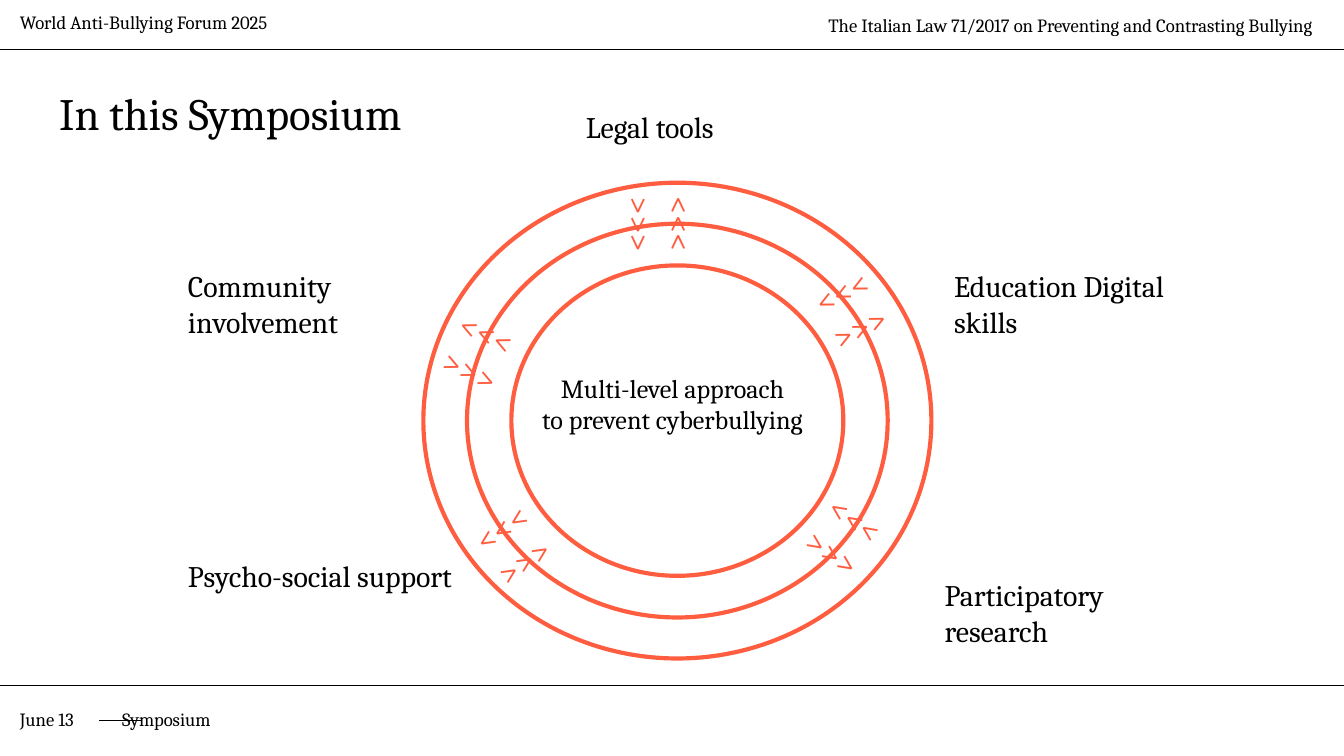
from lxml import etree
from pptx import Presentation
from pptx.dml.color import RGBColor
from pptx.enum import shapes as es, text as et
from pptx.oxml.ns import qn
from pptx.util import Inches, Pt

BLACK = RGBColor(0x00, 0x00, 0x00)
CORAL = RGBColor(0xFF, 0x5D, 0x40)
LEFT, MID, RIGHT = et.PP_ALIGN.LEFT, et.PP_ALIGN.CENTER, et.PP_ALIGN.RIGHT

# Widescreen page, 16 to 9
WIDE = Inches(10)
HIGH = WIDE * 9 // 16

FRAME = dict(word_wrap=True, auto_size=et.MSO_AUTO_SIZE.NONE,
             vertical_anchor=et.MSO_ANCHOR.TOP,
             **{"margin_" + side: Inches(0.1)
                for side in ("left", "top", "right", "bottom")})

# Topic labels: text, left, top, width, height
LABELS = [
    ("Legal tools", 4.26, 0.71, 1.48, 0.47),
    ("Participatory research", 6.93, 4.19, 1.91, 0.74),
    ("Education Digital skills", 7, 1.89, 1.91, 0.74),
    ("Psycho-social support", 1.3, 4.05, 2.18, 0.74),
    ("Community involvement", 1.3, 1.89, 1.91, 0.74),
]
# Ring sizes, sharing one centre
HUB = (5.04, 3.13)
RINGS = [(2.47, 2.31), (3.13, 2.93), (3.78, 3.54)]
# Two-way chevrons: left, top, turn
FLOWS = [(3.28, 2.33, 24.7), (4.47, 1.64, 90), (5.6, 2.27, 153.9),
         (5.41, 3.68, 214.8), (3.4, 3.52, 326.6)]


def apply(obj, vals):
    for key, val in vals.items():
        setattr(obj, key, val)


def write(shape, lines, size, color=BLACK, align=LEFT, space=None, tab=None):
    frame = shape.text_frame
    apply(frame, FRAME)
    for i, line in enumerate(lines):
        para = frame.add_paragraph() if i else frame.paragraphs[0]
        para.text = line
        apply(para, dict(alignment=align, line_spacing=space))
        if tab:
            stops = etree.SubElement(para._p.get_or_add_pPr(), qn("a:tabLst"))
            etree.SubElement(stops, qn("a:tab"), pos=str(Inches(tab)), algn="l")
        apply(para.font, dict(name="Cambria", size=Pt(size), bold=False))
        para.font.color.rgb = color


def add_text(slide, box, lines, size, turn=0, **style):
    shape = slide.shapes.add_textbox(*map(Inches, box))
    shape.rotation = turn
    write(shape, lines, size, **style)


def add_rule(slide, left, right, y):
    rule = slide.shapes.add_connector(
        es.MSO_CONNECTOR.STRAIGHT, *map(Inches, (left, y, right, y)))
    rule.line.color.rgb = BLACK
    rule.line.width = Pt(0.75)
    etree.SubElement(rule._element.spPr, qn("a:effectLst"))


def add_ring(slide, wide, high):
    box = (HUB[0] - wide / 2, HUB[1] - high / 2, wide, high)
    ring = slide.shapes.add_shape(es.MSO_SHAPE.OVAL, *map(Inches, box))
    ring.shadow.inherit = False
    ring.fill.background()
    ring.line.color.rgb = CORAL
    ring.line.width = Pt(2.25)


def add_title(slide):
    title = slide.shapes.title
    box = map(Inches, (0.34, 0.54, 9.32, 0.65))
    apply(title, dict(zip(("left", "top", "width", "height"), box)))
    write(title, ["In this Symposium"], 24)


def main():
    deck = Presentation()
    apply(deck, dict(slide_width=WIDE, slide_height=HIGH))
    slide = deck.slides.add_slide(deck.slide_layouts[5])

    # Header and footer
    for y in (0.37, 5.1):
        add_rule(slide, -0.02, 10.02, y)
    add_text(slide, (0.05, 0, 3.03, 0.16), ["World Anti-Bullying Forum 2025"], 10)
    add_text(slide, (5.14, 0, 4.72, 0.16),
             ["The Italian Law 71/2017 on Preventing and Contrasting Bullying"],
             10, align=RIGHT, space=1.15)
    add_text(slide, (0.05, 5.17, 2.17, 0.3), ["June 13\tSymposium"], 10, tab=0.76)
    add_rule(slide, 0.74, 1.05, 5.36)

    # Title and topics
    add_title(slide)
    for label, *box in LABELS:
        add_text(slide, box, [label], 16)

    # Rings around the main idea
    for size in RINGS:
        add_ring(slide, *size)
    add_text(slide, (3.77, 2.67, 2.47, 0.74),
             ["Multi-level approach", "to prevent cyberbullying"], 14, align=MID)

    # Chevrons across the rings
    for left, top, turn in FLOWS:
        add_text(slide, (left, top, 1.13, 0.58), ["<<<", ">>>"], 18,
                 turn=turn, color=CORAL)

    deck.save("out.pptx")


if __name__ == "__main__":
    main()
